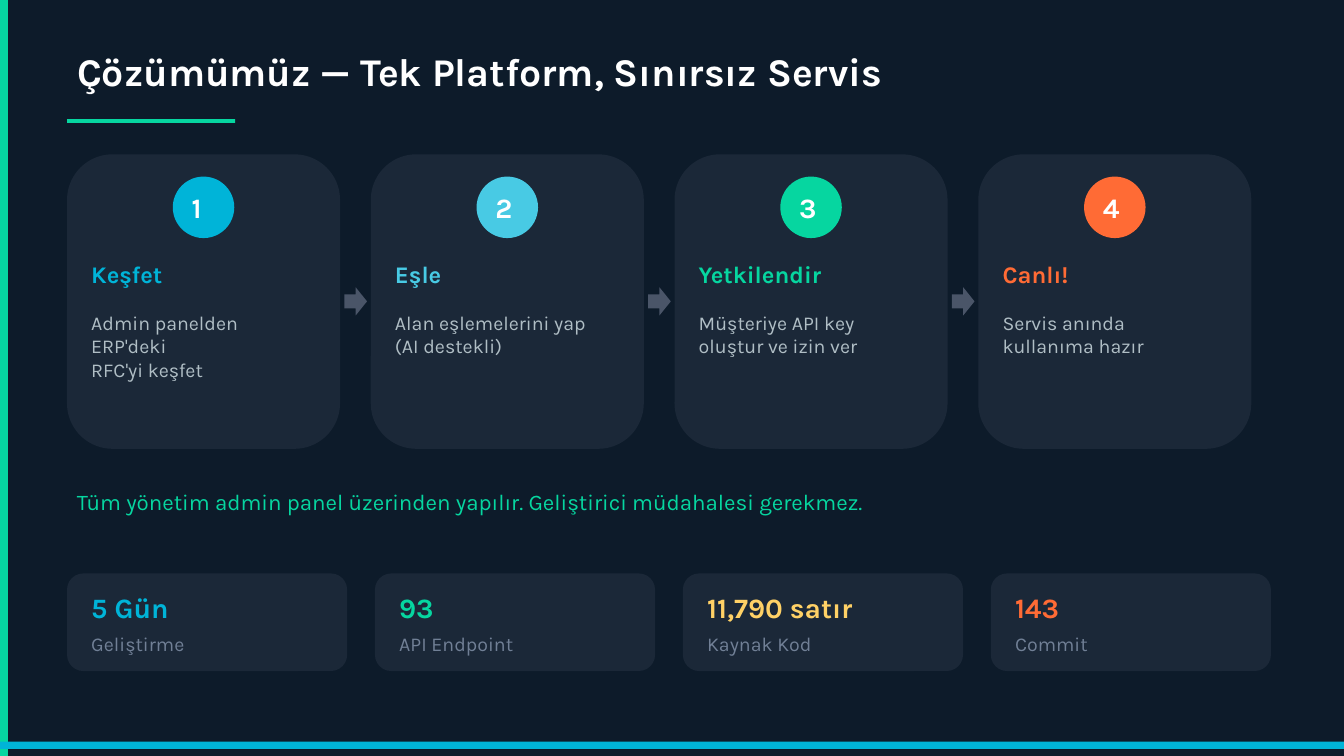
from dataclasses import dataclass

from pptx import Presentation
from pptx import util as u
from pptx.dml.color import RGBColor
from pptx.enum import shapes, text


@dataclass(frozen=True)
class Theme:
    font: str = "Karla"
    background: str = "0D1B2A"
    card: str = "1B2838"
    arrow: str = "4A5568"
    white: str = "FFFFFF"
    body: str = "B0BEC5"
    muted: str = "718096"
    blue: str = "00B4D8"
    sky: str = "48CAE4"
    green: str = "06D6A0"
    orange: str = "FF6B35"
    yellow: str = "FFD166"
    title_size: int = 28
    number_size: int = 20
    heading_size: int = 17
    note_size: int = 16
    body_size: int = 14


theme = Theme()
kinds = shapes.MSO_SHAPE


def add_block(kind, x, y, w, h, color):
    sp = s.shapes.add_shape(kind, u.Cm(x), u.Cm(y), u.Cm(w), u.Cm(h))
    sp.shadow.inherit = False
    sp.fill.solid()
    sp.fill.fore_color.rgb = RGBColor.from_string(color)
    sp.line.fill.background()
    return sp


def write(sp, content, size, color, bold=False):
    tf = sp.text_frame
    tf.word_wrap = True
    tf.auto_size = text.MSO_AUTO_SIZE.SHAPE_TO_FIT_TEXT
    tf.vertical_anchor = text.MSO_ANCHOR.TOP
    p = tf.paragraphs[0]
    p.text = content
    p.alignment = text.PP_ALIGN.LEFT
    p.font.name = theme.font
    p.font.size = u.Pt(size)
    p.font.bold = bold
    p.font.color.rgb = RGBColor.from_string(color)
    return tf


prs = Presentation()
prs.slide_width, prs.slide_height = u.Cm(33.87), u.Cm(19.05)
s = prs.slides.add_slide(prs.slide_layouts[5])
s.background.fill.solid()
s.background.fill.fore_color.rgb = RGBColor.from_string(theme.background)

left = 1.69
inset = 0.36

add_block(kinds.RECTANGLE, 0, 0, 0.2, 19.05, theme.green)

title = s.shapes.title
title.left, title.top, title.width, title.height = u.Cm(left), u.Cm(1.07), u.Cm(30.68), u.Cm(1.75)
write(title, "Çözümümüz — Tek Platform, Sınırsız Servis", theme.title_size, theme.white, True)
add_block(kinds.RECTANGLE, left, 3, 4.24, 0.1, theme.green)

steps = [
    ("Keşfet", "Admin panelden ERP'deki\nRFC'yi keşfet", theme.blue),
    ("Eşle", "Alan eşlemelerini yap\n(AI destekli)", theme.sky),
    ("Yetkilendir", "Müşteriye API key\noluştur ve izin ver", theme.green),
    ("Canlı!", "Servis anında\nkullanıma hazır", theme.orange),
]
step_pitch, step_width, circle_size = 7.655, 6.88, 1.55
for i, (heading, detail, color) in enumerate(steps):
    x = left + i * step_pitch
    add_block(kinds.ROUNDED_RECTANGLE, x, 3.89, step_width, 7.42, theme.card)

    circle_x = x + (step_width - circle_size) / 2
    circle = add_block(kinds.OVAL, circle_x, 4.45, circle_size, circle_size, color)
    tf = write(circle, str(i + 1), theme.number_size, theme.white, True)
    tf.word_wrap = False
    tf.auto_size = text.MSO_AUTO_SIZE.NONE
    tf.vertical_anchor = text.MSO_ANCHOR.MIDDLE

    text_x, text_width = u.Cm(x + inset), u.Cm(step_width - 2 * inset)
    box = s.shapes.add_textbox(text_x, u.Cm(6.43), text_width, u.Cm(1))
    write(box, heading, theme.heading_size, color, True)
    box = s.shapes.add_textbox(text_x, u.Cm(7.7), text_width, u.Cm(3))
    write(box, detail, theme.body_size, theme.body)

    if i < len(steps) - 1:
        add_block(kinds.RIGHT_ARROW, x + 6.99, 7.24, 0.57, 0.71, theme.arrow)

note = s.shapes.add_textbox(u.Cm(left), u.Cm(12.17), u.Cm(30.68), u.Cm(1.27))
write(
    note,
    "Tüm yönetim admin panel üzerinden yapılır. Geliştirici müdahalesi gerekmez.",
    theme.note_size,
    theme.green,
)

stats = [
    ("5 Gün", "Geliştirme", theme.blue),
    ("93", "API Endpoint", theme.green),
    ("11,790 satır", "Kaynak Kod", theme.yellow),
    ("143", "Commit", theme.orange),
]
stat_pitch, stat_width = 7.76, 7.06
for i, (value, label, color) in enumerate(stats):
    x = left + i * stat_pitch
    add_block(kinds.ROUNDED_RECTANGLE, x, 14.45, stat_width, 2.46, theme.card)

    text_x, text_width = u.Cm(x + inset), u.Cm(stat_width - 2 * inset)
    box = s.shapes.add_textbox(text_x, u.Cm(14.76), text_width, u.Cm(1))
    write(box, value, theme.number_size, color, True)
    box = s.shapes.add_textbox(text_x, u.Cm(15.8), text_width, u.Cm(0.84))
    write(box, label, theme.body_size, theme.muted)

add_block(kinds.RECTANGLE, 0, 18.69, 33.87, 0.18, theme.blue)

prs.save("out.pptx")
